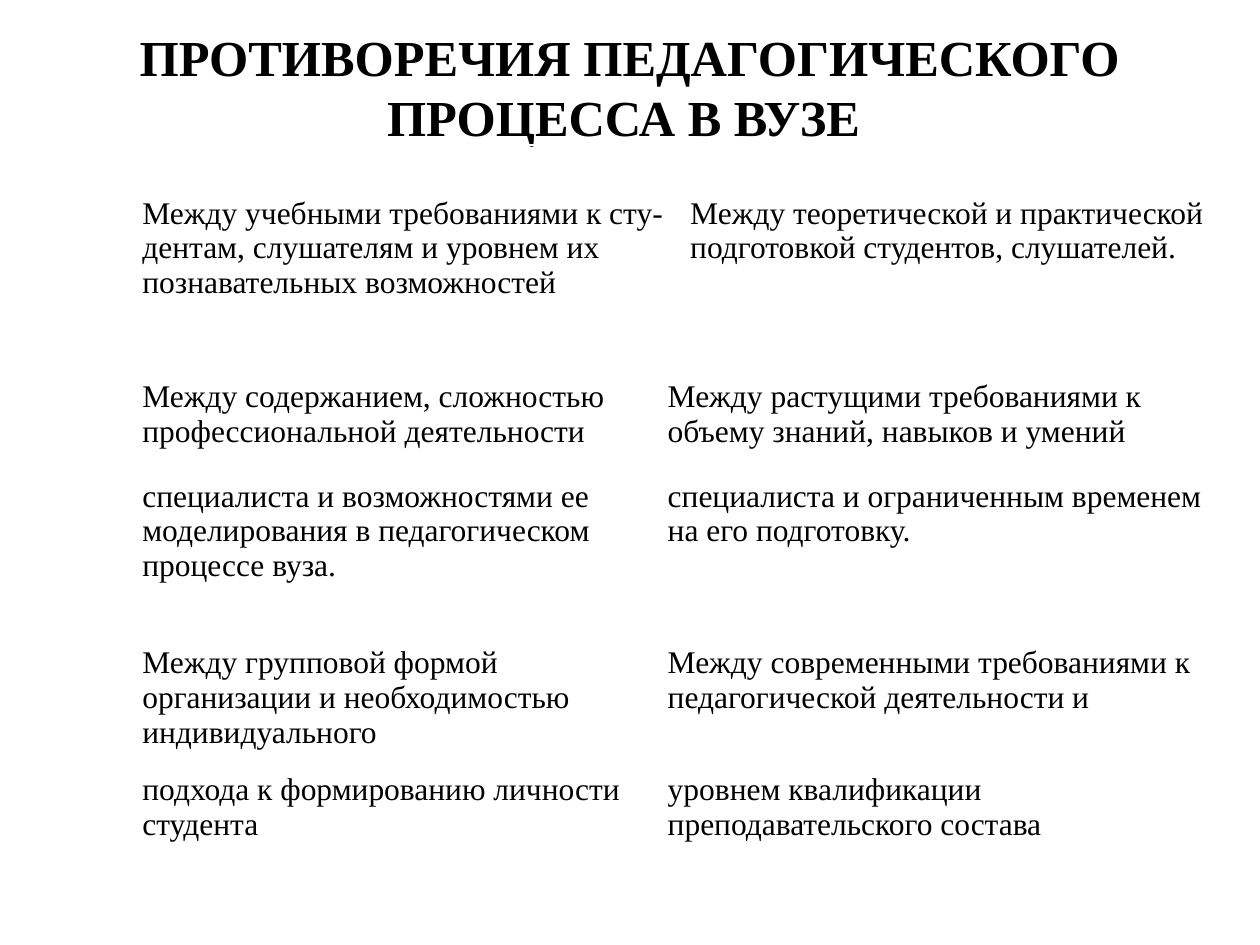
"""Build a slide listing the contradictions of the university teaching process in a table."""
import pptx
import pptx.dml.color
import pptx.enum.text
import pptx.oxml.ns
import pptx.util
from lxml import etree

BLACK = pptx.dml.color.RGBColor(0x00, 0x00, 0x00)
FONT = "Times New Roman"
TITLE_SIZE = pptx.util.Pt(28.8)
BODY_SIZE = pptx.util.Pt(18)
COLUMNS = [4.17, 0.12, 4.29]
ROWS = [0.4, 1.05, 0.4, 0.79, 1.32, 1.01, 0.79]
CONTRADICTIONS = {
    1: ("Между учебными требованиями к сту-дентам, слушателям и уровнем их познавательных возможностей",
        "Между теоретической и практической подготовкой студентов, слушателей."),
    3: ("Между содержанием, сложностью профессиональной деятельности",
        "Между растущими требованиями к объему знаний, навыков и умений"),
    4: ("специалиста и возможностями ее моделирования в педагогическом процессе вуза.",
        "специалиста и ограниченным временем на его подготовку."),
    5: ("Между групповой формой организации и необходимостью индивидуального",
        "Между современными требованиями к педагогической деятельности и"),
    6: ("подхода к формированию личности студента",
        "уровнем квалификации преподавательского состава"),
}


def add_run(paragraph, text, size, bold=False):
    run = paragraph.add_run()
    run.text = text
    run.font.name = FONT
    run.font.size = size
    run.font.bold = bold
    run.font.color.rgb = BLACK


presentation = pptx.Presentation()
presentation.slide_width = pptx.util.Inches(10)
presentation.slide_height = pptx.util.Inches(7.5)
width, height = presentation.slide_width, presentation.slide_height
slide = presentation.slides.add_slide(presentation.slide_layouts[5])

title = slide.shapes.title
title.left, title.top = int(width * 0.05), int(height * 0.04)
title.width, title.height = int(width * 0.9), pptx.util.Inches(1.25)
title.text_frame.word_wrap = True
title.text_frame.auto_size = pptx.enum.text.MSO_AUTO_SIZE.NONE
title.text_frame.vertical_anchor = pptx.enum.text.MSO_ANCHOR.MIDDLE
heading = title.text_frame.paragraphs[0]
heading.alignment = pptx.enum.text.PP_ALIGN.CENTER
add_run(heading, "ПРОТИВОРЕЧИЯ ПЕДАГОГИЧЕСКОГО ПРОЦЕССА В ВУЗЕ ", TITLE_SIZE, bold=True)
heading.add_line_break()
heading_end = etree.SubElement(heading._p, pptx.oxml.ns.qn("a:endParaRPr"))
heading_end.set("sz", str(int(TITLE_SIZE.pt * 100)))

table = slide.shapes.add_table(
    len(ROWS), len(COLUMNS), pptx.util.Inches(1.06), pptx.util.Inches(1.15),
    pptx.util.Inches(sum(COLUMNS)), pptx.util.Inches(sum(ROWS))).table
table.first_row = False
table.horz_banding = False
for column, column_width in zip(table.columns, COLUMNS):
    column.width = pptx.util.Inches(column_width)
for row, row_height in zip(table.rows, ROWS):
    row.height = pptx.util.Inches(row_height)
for cell in table.iter_cells():
    cell.fill.background()

for row_index in range(len(ROWS)):
    if row_index not in CONTRADICTIONS:
        table.cell(row_index, 0).merge(table.cell(row_index, 2))
        continue
    merge_start = 0 if row_index == 1 else 1
    table.cell(row_index, merge_start).merge(table.cell(row_index, merge_start + 1))
    right_column = 2 if row_index == 1 else 1
    for column_index, text in zip((0, right_column), CONTRADICTIONS[row_index]):
        cell = table.cell(row_index, column_index)
        cell.margin_left = cell.margin_right = pptx.util.Inches(0.07)
        cell.margin_top = cell.margin_bottom = 0
        add_run(cell.text_frame.paragraphs[0], text, BODY_SIZE)

presentation.save("out.pptx")
